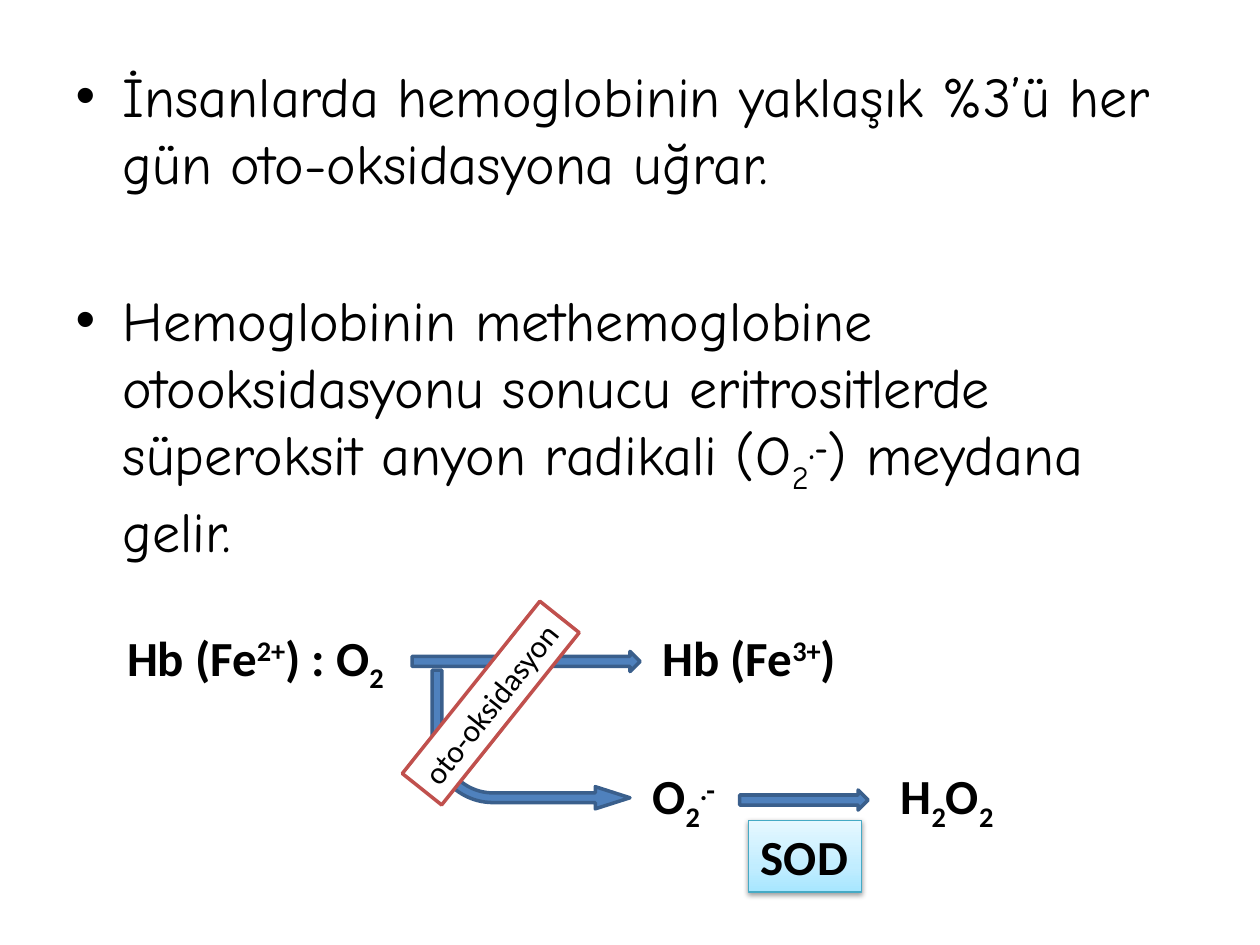
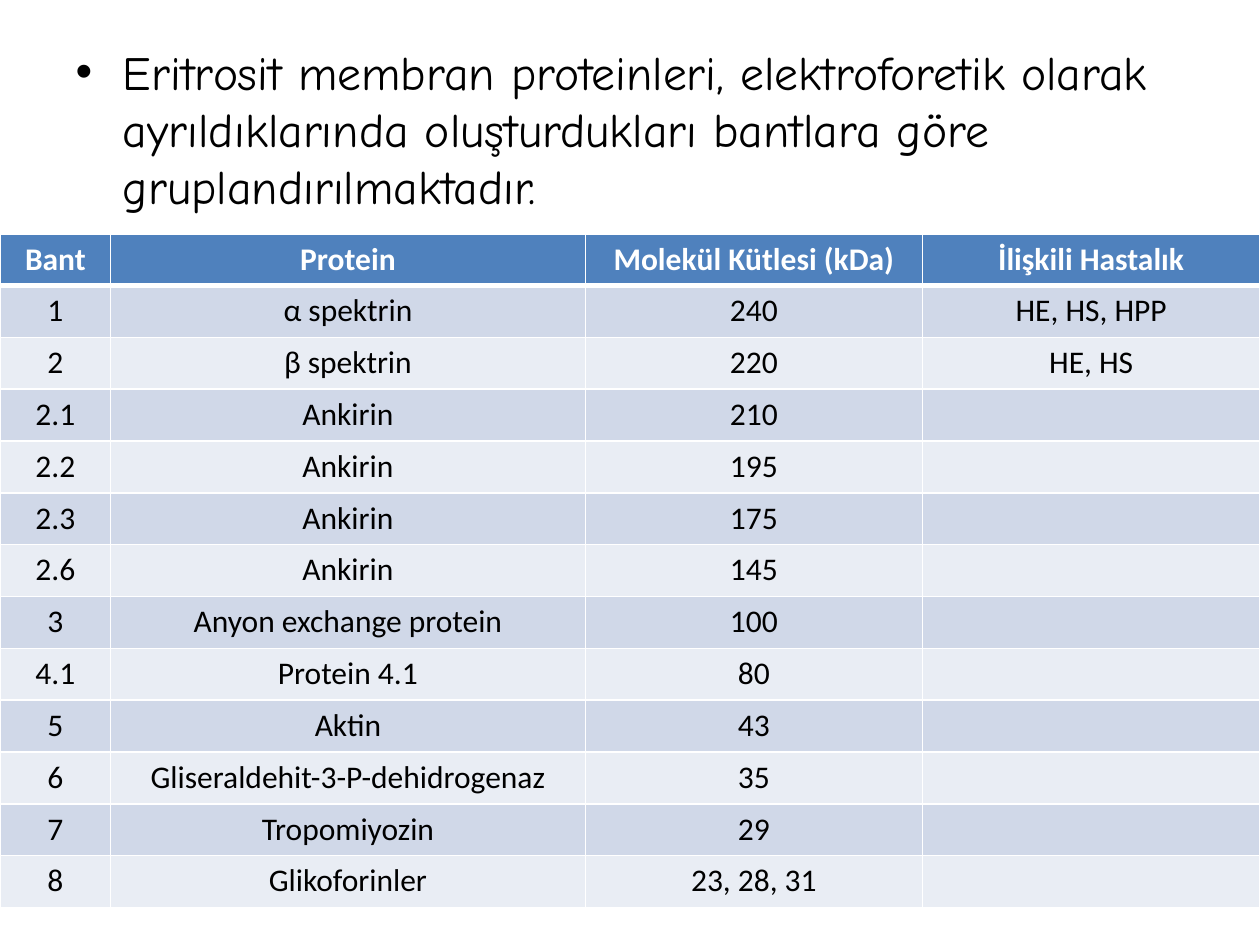
from collections import namedtuple

from lxml import etree
from pptx import Presentation
from pptx import util as u
from pptx.dml import color
from pptx.enum import shapes, text
from pptx.oxml import ns

COLORS = {
    "ink": "000000", "paper": "FFFFFF", "blue": "4F81BD", "blue_edge": "3A5F8C",
    "red_edge": "C0504D", "aqua_edge": "46AAC5", "odd_row": "D0D8E8", "even_row": "E9EDF4",
}
AQUA_STOPS = ((0, "A7E6FF"), (35, "C1EDFF"), (100, "E7F8FF"))
BODY_FONT, LABEL_FONT = "Comic Neue", "Calibri"
SUB, SUPER = -25, 30

Box = namedtuple("Box", "left top width height")
SLIDE = Box(0, 0, 10, 7.5)

BANDS = (
    ("Bant", "Protein", "Molekül Kütlesi (kDa)", "İlişkili Hastalık"),
    ("1", "α spektrin", "240", "HE, HS, HPP"),
    ("2", "β spektrin", "220", "HE, HS"),
    ("2.1", "Ankirin", "210", ""),
    ("2.2", "Ankirin", "195", ""),
    ("2.3", "Ankirin", "175", ""),
    ("2.6", "Ankirin", "145", ""),
    ("3", "Anyon exchange protein", "100", ""),
    ("4.1", "Protein 4.1", "80", ""),
    ("5", "Aktin", "43", ""),
    ("6", "Gliseraldehit-3-P-dehidrogenaz", "35", ""),
    ("7", "Tropomiyozin", "29", ""),
    ("8", "Glikoforinler", "23, 28, 31", ""),
)


def rgb(name):
    """Return the named colour."""
    return color.RGBColor.from_string(COLORS[name])


def element(parent, tag, **attributes):
    """Append a drawing element to its parent."""
    return etree.SubElement(parent, ns.qn(tag), {k: str(v) for k, v in attributes.items()})


def inches(box):
    """Convert a box to slide lengths."""
    return [u.Inches(length) for length in box]


def cells_of(region, columns, rows):
    """Return a rule that places a part on the grid of a region."""
    across, down = region.width / columns, region.height / rows
    return lambda x, y, width, height: Box(
        region.left + x * across, region.top + y * down, width * across, height * down)


def add_run(paragraph, words, size, font=LABEL_FONT, bold=False, ink="ink", baseline=0):
    """Add one formatted run."""
    run = paragraph.add_run()
    run.text = words
    run.font.size, run.font.name, run.font.bold = u.Pt(size), font, bold
    run.font.color.rgb = rgb(ink)
    if baseline:
        run.font._element.set("baseline", str(baseline * 1000))


def add_body(slide, box, size, paragraphs, gap=0):
    """Fill the body placeholder with bulleted paragraphs."""
    title = slide.shapes.title
    title._element.getparent().remove(title._element)
    body = slide.placeholders[1]
    body.left, body.top, body.width, body.height = inches(box)
    frame = body.text_frame
    frame.auto_size = text.MSO_AUTO_SIZE.NONE
    for index, runs in enumerate(paragraphs):
        paragraph = frame.add_paragraph() if index else frame.paragraphs[0]
        if index:
            paragraph.space_before = u.Pt(gap)
        for words, baseline in runs:
            add_run(paragraph, words, size, BODY_FONT, baseline == SUPER, baseline=baseline)


def write_label(shape, runs, size=28, bold=True):
    """Write one unwrapped line in a shape."""
    frame = shape.text_frame
    frame.word_wrap = False
    frame.auto_size = text.MSO_AUTO_SIZE.SHAPE_TO_FIT_TEXT
    frame.paragraphs[0].alignment = text.PP_ALIGN.LEFT
    for words, baseline in runs:
        add_run(frame.paragraphs[0], words, size, bold=bold, baseline=baseline)


def add_formula(slide, box, *runs):
    """Add a chemical formula."""
    write_label(slide.shapes.add_textbox(*inches(box)), runs)


def add_figure(slide, kind, box, fill="blue", edge="blue_edge", weight=2):
    """Add a flat preset shape."""
    shape = slide.shapes.add_shape(kind, *inches(box))
    shape.shadow.inherit = False
    shape.fill.solid()
    shape.fill.fore_color.rgb = rgb(fill)
    shape.line.color.rgb = rgb(edge)
    shape.line.width = u.Pt(weight)
    return shape


def add_enzyme(slide, box, name):
    """Add an enzyme tag with a gradient and a soft shadow."""
    tag = add_figure(slide, shapes.MSO_SHAPE.RECTANGLE, box, edge="aqua_edge", weight=0.75)
    tag.fill.gradient()
    tag.fill.gradient_angle = 90
    properties = tag._element.spPr
    stops = properties.find(".//" + ns.qn("a:gsLst"))
    for stop in list(stops):
        stops.remove(stop)
    for position, value in AQUA_STOPS:
        element(element(stops, "a:gs", pos=position * 1000), "a:srgbClr", val=value)
    shadow = element(properties.find(ns.qn("a:effectLst")), "a:outerShdw", blurRad=u.Pt(3.1),
                     dist=u.Pt(1.6), dir=5400000, rotWithShape=0)
    element(element(shadow, "a:srgbClr", val=COLORS["ink"]), "a:alpha", val=38000)
    write_label(tag, [(name, 0)])


def add_reaction(slide, region):
    """Draw the auto-oxidation of haemoglobin."""
    at = cells_of(region, 72, 24)
    arrow = shapes.MSO_SHAPE.RIGHT_ARROW
    add_formula(slide, at(0.1, 2.3, 23.2, 5.7),
                ("Hb (Fe", 0), ("2+", SUPER), (") : O", 0), ("2", SUB))
    add_figure(slide, arrow, at(23.7, 4.7, 18.1, 1.6))
    add_formula(slide, at(42.6, 2.3, 16.3, 5.7), ("Hb (Fe", 0), ("3+", SUPER), (")", 0))
    branch = add_figure(slide, shapes.MSO_SHAPE.BENT_ARROW, at(25.3, 6.2, 15.7, 11))
    for index, share in enumerate((0.07, 0.08, 0.25, 0.44)):
        branch.adjustments[index] = share
    branch._element.spPr.xfrm.set("flipV", "1")
    add_formula(slide, at(41.8, 13.3, 7.5, 5.7), ("O", 0), ("2", SUB), (".-", SUPER))
    process = add_figure(slide, shapes.MSO_SHAPE.RECTANGLE, at(21.2, 6.8, 17.5, 4),
                         "paper", "red_edge")
    process.rotation = 308.6
    write_label(process, [("oto-oksidasyon", 0)], 18, False)
    add_figure(slide, arrow, at(49.7, 15.7, 10.2, 1.6))
    add_enzyme(slide, at(50.4, 18.1, 9, 5.7), "SOD")
    add_formula(slide, at(61.5, 13.3, 9.8, 5.7), ("H", 0), ("2", SUB), ("O", 0), ("2", SUB))


def format_cell(cell, words, is_header, fill):
    """Write, border and fill one table cell."""
    properties = cell._tc.get_or_add_tcPr()
    for side in "LRTB":
        weight = 3 if is_header and side == "B" else 1
        border = element(properties, "a:ln" + side, w=u.Pt(weight))
        element(element(border, "a:solidFill"), "a:srgbClr", val=COLORS["paper"])
    cell.fill.solid()
    cell.fill.fore_color.rgb = rgb(fill)
    paragraph = cell.text_frame.paragraphs[0]
    paragraph.alignment = text.PP_ALIGN.CENTER
    if words:
        add_run(paragraph, words, 18, bold=is_header, ink="paper" if is_header else "ink")


def add_band_table(slide, region, header_height=0.39):
    """Add the table of membrane protein bands."""
    table = slide.shapes.add_table(len(BANDS), len(BANDS[0]), *inches(region)).table
    shares = (0.88, 3.77, 2.68, 2.68)
    for column, share in zip(table.columns, shares):
        column.width = u.Inches(region.width * share / sum(shares))
    row_height = (region.height - header_height) / (len(BANDS) - 1)
    for index, record in enumerate(BANDS):
        table.rows[index].height = u.Inches(row_height if index else header_height)
        fill = ("even_row", "odd_row")[index % 2] if index else "blue"
        for column, words in enumerate(record):
            format_cell(table.cell(index, column), words, index == 0, fill)


def build_oxidation_slide(slide, page):
    """Build the slide on haemoglobin auto-oxidation."""
    at = cells_of(page, 100, 75)
    add_body(slide, at(5, 4.4, 90, 42.5), 32, [
        [("İnsanlarda hemoglobinin yaklaşık %3’ü her gün oto-oksidasyona uğrar.", 0)],
        [("Hemoglobinin methemoglobine otooksidasyonu sonucu eritrositlerde "
          "süperoksit anyon radikali (O", 0), ("2", SUB), (".-", SUPER),
         (") meydana gelir.", 0)],
    ], gap=51)
    add_reaction(slide, at(9, 47, 72, 24))


def build_protein_slide(slide, page):
    """Build the slide on membrane proteins."""
    at = cells_of(page, 100, 75)
    add_body(slide, at(5, 2.9, 90, 15.7), 27.2, [
        [("Eritrosit membran proteinleri, elektroforetik olarak ayrıldıklarında "
          "oluşturdukları bantlara göre gruplandırılmaktadır.", 0)],
    ])
    add_band_table(slide, at(0, 18.6, 100, 53.3))


def main():
    """Build and save the presentation."""
    presentation = Presentation()
    presentation.slide_width = u.Inches(SLIDE.width)
    presentation.slide_height = u.Inches(SLIDE.height)
    for build in (build_oxidation_slide, build_protein_slide):
        build(presentation.slides.add_slide(presentation.slide_layouts[1]), SLIDE)
    presentation.save("out.pptx")


if __name__ == "__main__":
    main()
